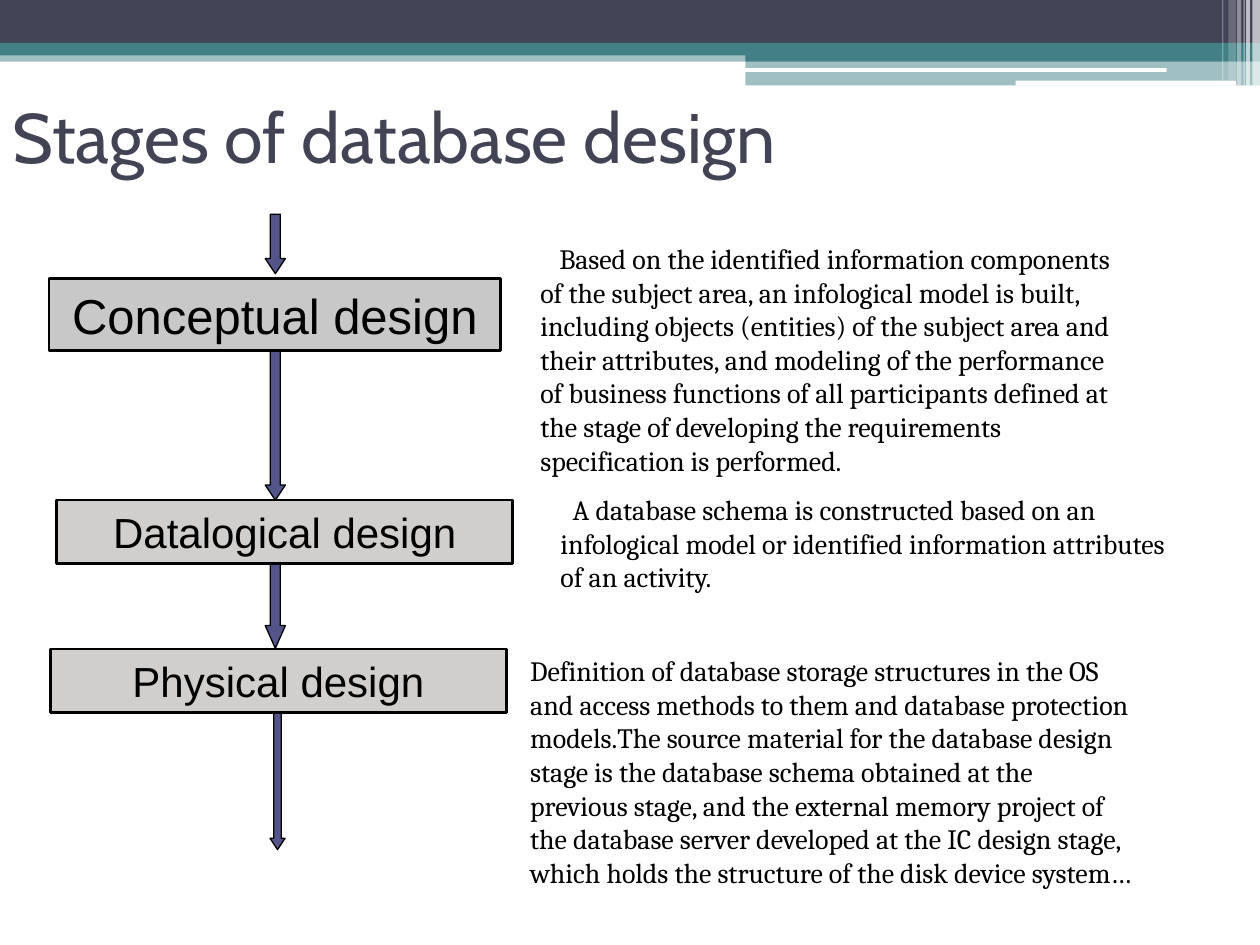
from lxml import etree
from pptx import Presentation
from pptx.dml.color import RGBColor
from pptx.enum.shapes import MSO_SHAPE
from pptx.enum.text import MSO_ANCHOR, MSO_AUTO_SIZE, PP_ALIGN
from pptx.oxml.ns import qn
from pptx.util import Pt

RECT, ROUNDED, ARROW = MSO_SHAPE.RECTANGLE, MSO_SHAPE.ROUNDED_RECTANGLE, MSO_SHAPE.DOWN_ARROW
TOP, MIDDLE = MSO_ANCHOR.TOP, MSO_ANCHOR.MIDDLE
LEFT, CENTER = PP_ALIGN.LEFT, PP_ALIGN.CENTER
NO_AUTOSIZE = MSO_AUTO_SIZE.NONE

NAVY, TEAL, WHITE, BLACK, INDIGO = "424456", "438086", "FFFFFF", "000000", "53548A"

TITLE = "Stages of database design"
TITLE_BOX = (0, 35.3, 648, 84.2)

BANDS = [
    ((0, 28.8, 720, 6.5), TEAL, 50),
    ((0, 0, 720, 24.5), NAVY, 100),
    ((0, 24.5, 720, 7.2), TEAL, 100),
    ((426, 28.1, 294, 7), TEAL, 100),
    ((426, 34.6, 294, 14.2), TEAL, 50),
]
GROOVES = [(425.5, 38.9, 241.2, 2.2), (580.3, 46.1, 126, 2.9)]
STRIPES = [
    (715.7, 4.3, 49, 65),
    (712.1, 2.2, 49, 65),
    (710.6, 0.7, 49, 60),
    (707, 2.2, 49, 40),
    (702, 4.3, 46, 20),
    (698.4, 0.7, 46, 30),
]

STAGES = [
    ("Conceptual design", (28.1, 159.1, 257.8, 41.2), "C8C8C8", 28),
    ("Datalogical design", (32.4, 285.8, 260.6, 36.2), "D1CFCD", 24),
    ("Physical design", (28.8, 370.8, 260.6, 36.2), "D1CFCD", 24),
]
ARROWS = [
    ((151.6, 122.4, 11.5, 34), 0.75),
    ((151.6, 200.6, 11.5, 85.2), 0.75),
    ((151.6, 314, 11.5, 56.5), 1.13),
    ((154.3, 407, 8.6, 78.5), 0.75),
]

CONCEPTUAL_NOTE = (
    "Based on the identified information components of the subject area, an infological model "
    "is built, including objects (entities) of the subject area and their attributes, and modeling "
    "of the performance of business functions of all participants defined at the stage of "
    "developing the requirements specification is performed."
)
CONCEPTUAL_BOX = (293, 134.5, 352.1, 153.4)
NOTES = [
    (
        "A database schema is constructed based on an infological model or identified information "
        "attributes of an activity.",
        (313.2, 278, 360, 65.5),
        7,
    ),
    (
        "Definition of database storage structures in the OS and access methods to them and database "
        "protection models.The source material for the database design stage is the database schema "
        "obtained at the previous stage, and the external memory project of the database server "
        "developed at the IC design stage, which holds the structure of the disk device system…",
        (295.9, 370.1, 360, 162.7),
        0,
    ),
]


def color(hex_code):
    return RGBColor.from_string(hex_code)


def place(part, box):
    part.left, part.top, part.width, part.height = map(Pt, box)


def write(part, text, font="Cambria", size=16, ink=BLACK, align=LEFT, anchor=TOP, margin=0, indent=0):
    frame = part.text_frame
    frame.word_wrap = True
    frame.auto_size = NO_AUTOSIZE
    frame.vertical_anchor = anchor
    frame.text = text
    paragraph = frame.paragraphs[0]
    properties = paragraph._p.get_or_add_pPr()
    properties.set("marL", str(Pt(margin)))
    properties.set("indent", str(Pt(indent)))
    etree.SubElement(properties, qn("a:buNone"))
    paragraph.alignment = align
    paragraph.space_before = Pt(0)
    paragraph.font.name = font
    paragraph.font.size = Pt(size)
    paragraph.font.color.rgb = color(ink)


def draw(slide, kind, box, fill, opacity=100, line_width=0):
    part = slide.shapes.add_shape(kind, *map(Pt, box))
    part.shadow.inherit = False
    part.fill.solid()
    part.fill.fore_color.rgb = color(fill)
    if opacity < 100:
        tint = part.fill._xPr.find(qn("a:solidFill"))[0]
        etree.SubElement(tint, qn("a:alpha"), val=str(opacity * 1000))
    if line_width:
        part.line.color.rgb = color(BLACK)
        part.line.width = Pt(line_width)
    else:
        part.line.fill.background()
    return part


def draw_header(slide):
    for box, fill, opacity in BANDS:
        draw(slide, RECT, box, fill, opacity)
    for box in GROOVES:
        draw(slide, ROUNDED, box, WHITE)
    for left, width, height, opacity in STRIPES:
        draw(slide, RECT, (left, 0, width, height), WHITE, opacity)


def main():
    """Build the slide on the stages of database design."""
    deck = Presentation()
    deck.slide_width, deck.slide_height = Pt(720), Pt(540)
    slide = deck.slides.add_slide(deck.slide_layouts[1])
    draw_header(slide)

    title, conceptual_note = slide.placeholders
    place(title, TITLE_BOX)
    write(title, TITLE, font="Cabin", size=40, ink=NAVY, anchor=MIDDLE)
    place(conceptual_note, CONCEPTUAL_BOX)
    write(conceptual_note, CONCEPTUAL_NOTE, margin=8.6, indent=10.8)

    for box, head in ARROWS:
        arrow = draw(slide, ARROW, box, INDIGO, line_width=0.75)
        arrow.adjustments[1] = head
    for name, box, fill, size in STAGES:
        stage = draw(slide, RECT, box, fill, line_width=1.5)
        write(stage, name, font="Arial", size=size, align=CENTER, anchor=MIDDLE)
    for text, box, indent in NOTES:
        note = slide.shapes.add_textbox(*map(Pt, box))
        write(note, text, indent=indent)

    deck.save("out.pptx")


if __name__ == "__main__":
    main()
